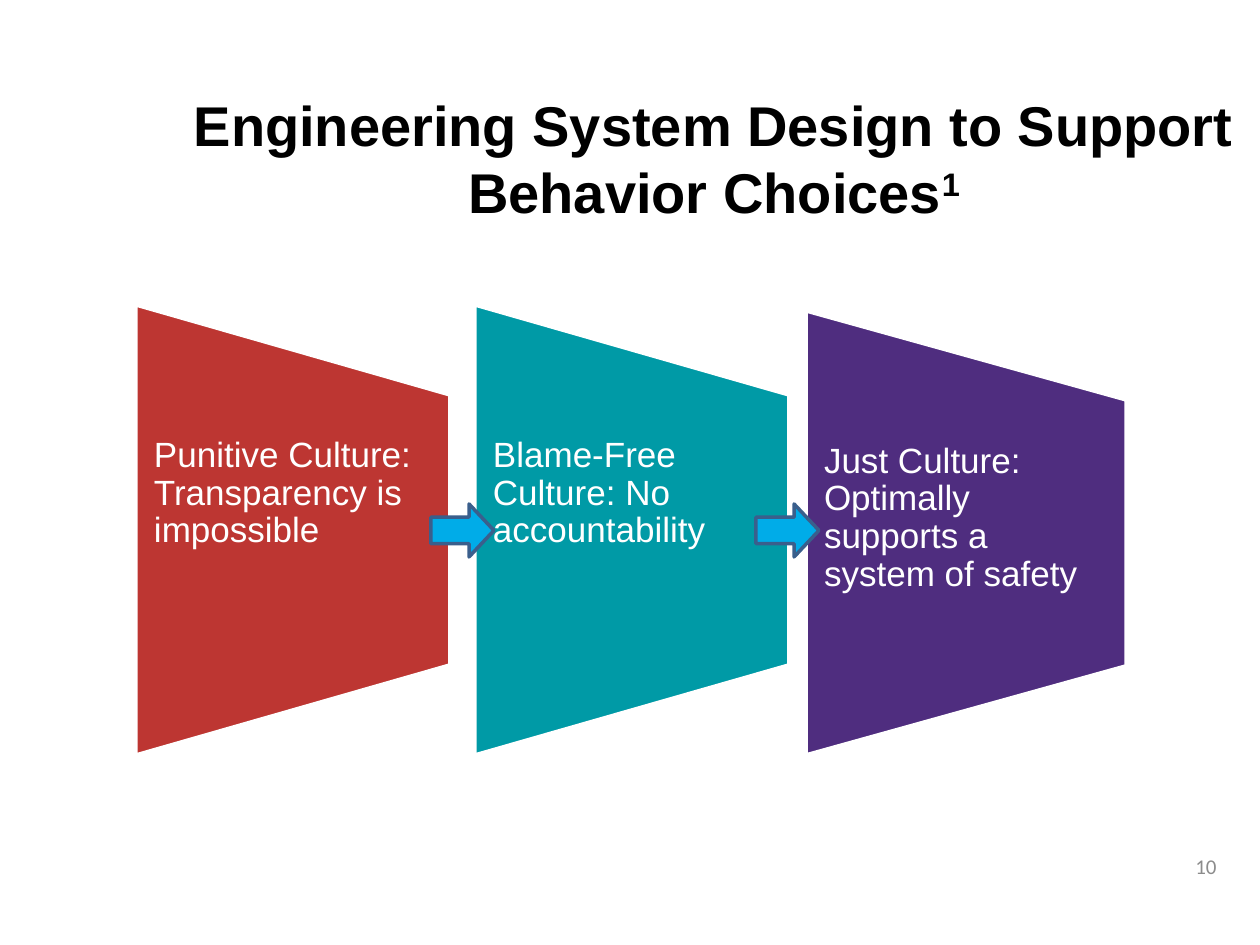
from pptx import Presentation
from pptx.dml.color import RGBColor
from pptx.enum.shapes import MSO_SHAPE
from pptx.enum.text import MSO_ANCHOR, PP_ALIGN
from pptx.util import Pt

PX = 914400 / 126

TITLE = "Engineering System Design to Support Behavior Choices"
NOTE = "1"
PAGE = "10"
# text, fill, left, top, width, height
PANELS = [
    ("Punitive Culture: Transparency is impossible", "red", 136, 305, 314, 450),
    ("Blame-Free Culture: No accountability", "teal", 475, 305, 314, 450),
    ("Just Culture: Optimally supports a system of safety", "purple",
     806, 311, 320, 444),
]
ARROWS = [431, 756]

THEME = {
    "font": "Arial", "title": 32, "body": 20, "small": 12, "line": 2,
    "black": "000000", "white": "FFFFFF", "gray": "8C8C8C",
    "red": "BD3632", "teal": "009AA6", "purple": "4F2D7F",
    "arrow": "00ACE8", "edge": "3A5F8C",
}


def px(n):
    return round(n * PX)


def color(name):
    return RGBColor.from_string(THEME[name])


def style(part, size, tone, font=THEME["font"]):
    part.font.name = font
    part.font.size = Pt(THEME[size])
    part.font.color.rgb = color(tone)


def paint(shape, fill, edge):
    shape.shadow.inherit = False
    shape.fill.solid()
    shape.fill.fore_color.rgb = color(fill)
    shape.line.color.rgb = color(edge)
    shape.line.width = Pt(THEME["line"])


def add_title(slide):
    title = slide.shapes.title
    title.left, title.top, title.width, title.height = map(px, (147, 84, 1134, 147))
    frame = title.text_frame
    frame.text = TITLE
    frame.vertical_anchor = MSO_ANCHOR.MIDDLE
    para = frame.paragraphs[0]
    para.alignment = PP_ALIGN.CENTER
    mark = para.add_run()
    mark.text = NOTE
    for run in para.runs:
        style(run, "title", "black")
        run.font.bold = True
    mark._r.get_or_add_rPr().set("baseline", "30000")


def add_panel(slide, text, fill, left, top, width, height):
    """Draw a panel whose right side is a fifth shorter at each end."""
    right, base, cut = left + width, top + height, round(height / 5)
    path = slide.shapes.build_freeform(left, base, scale=PX)
    path.add_line_segments([(left, top), (right, top + cut), (right, base - cut)])
    panel = path.convert_to_shape()
    paint(panel, fill, "white")
    frame = panel.text_frame
    frame.text = text
    frame.word_wrap = True
    frame.vertical_anchor = MSO_ANCHOR.TOP
    frame.margin_left = frame.margin_right = px(18)
    frame.margin_top = frame.margin_bottom = px(132)
    para = frame.paragraphs[0]
    para.alignment = PP_ALIGN.LEFT
    para.line_spacing = 0.9
    style(para.runs[0], "body", "white")


def add_arrow(slide, left):
    arrow = slide.shapes.add_shape(
        MSO_SHAPE.RIGHT_ARROW, px(left), px(504), px(63), px(53))
    arrow.adjustments[1] = 0.47
    paint(arrow, "arrow", "edge")


def add_page(slide):
    box = slide.shapes.add_textbox(px(935), px(841), px(294), px(50))
    frame = box.text_frame
    frame.word_wrap = True
    frame.vertical_anchor = MSO_ANCHOR.MIDDLE
    frame.text = PAGE
    para = frame.paragraphs[0]
    para.alignment = PP_ALIGN.RIGHT
    style(para.runs[0], "small", "gray", "Calibri")


def main():
    deck = Presentation()
    deck.slide_width, deck.slide_height = px(1260), px(945)
    slide = deck.slides.add_slide(deck.slide_layouts[5])
    add_page(slide)
    add_title(slide)
    for panel in PANELS:
        add_panel(slide, *panel)
    for left in ARROWS:
        add_arrow(slide, left)
    deck.save("out.pptx")


if __name__ == "__main__":
    main()
